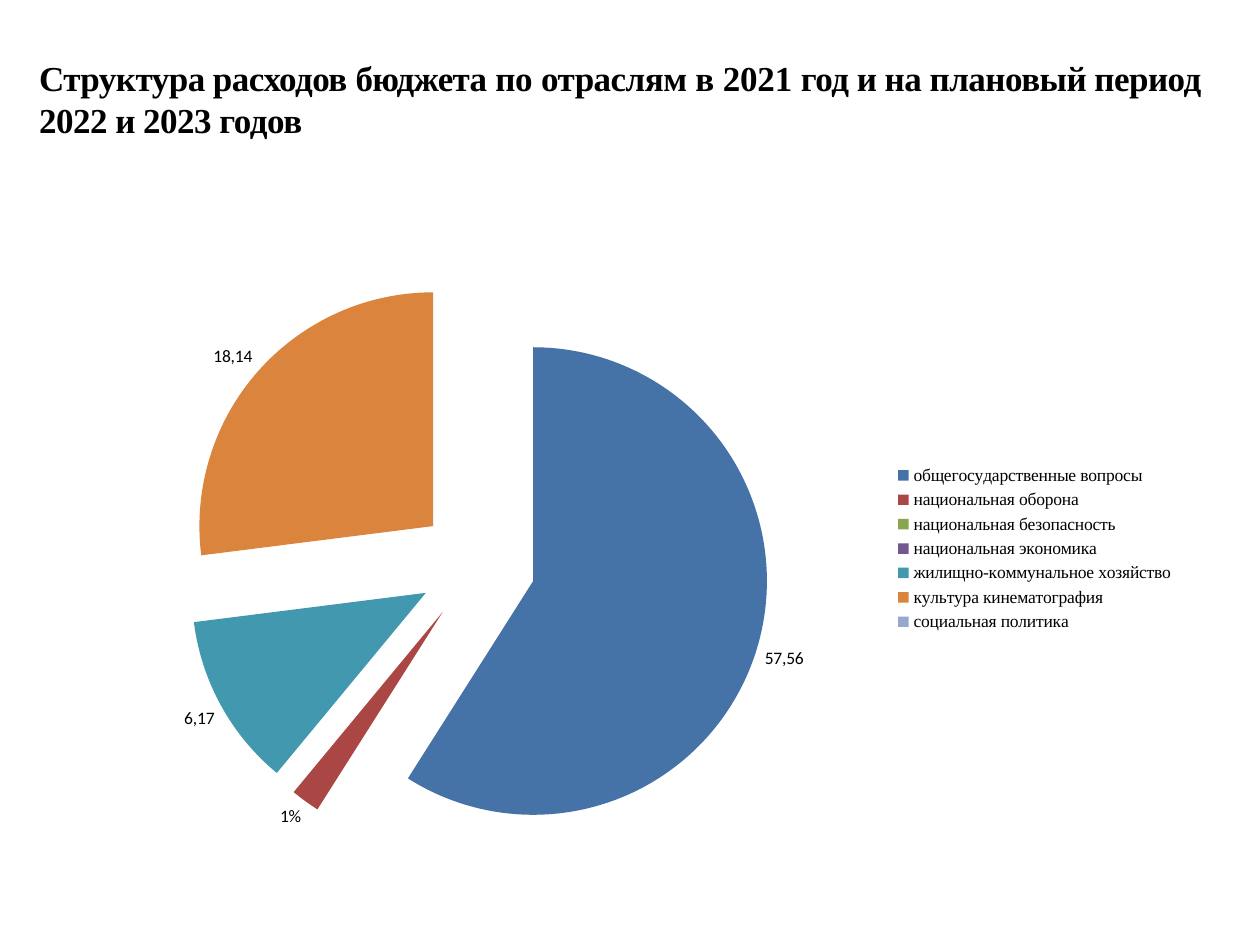
from lxml.etree import SubElement
from pptx import Presentation
from pptx.chart.data import CategoryChartData
from pptx.dml.color import RGBColor
from pptx.enum.chart import XL_CHART_TYPE, XL_LABEL_POSITION, XL_LEGEND_POSITION
from pptx.oxml import parse_xml
from pptx.oxml.ns import nsdecls, qn
from pptx.util import Inches, Pt

SERIF = "Times New Roman"
SANS = "Calibri"
TITLE = [
    ("Структура расходов ", -30), ("бюджета ", -40), ("по ", -20),
    ("отраслям ", -30), ("в ", -20), ("2021 ", -10),
    ("год и на плановый период 2022 и 2023 годов", -30),
]
SECTORS = [
    ("общегосударственные вопросы", 59, "4572A7", "57,56"),
    ("национальная оборона", 2, "AA4643", "1%"),
    ("национальная безопасность", 0, "89A54E", None),
    ("национальная экономика", 0, "71588F", None),
    ("жилищно-коммунальное хозяйство", 12, "4198AF", "6,17"),
    ("культура кинематография", 27, "DB843D", "18,14"),
    ("социальная политика", 0, "93A9CF", None),
]


def color(code):
    """Turn a hex string into a colour."""
    return RGBColor.from_string(code)


def style(font, name=SANS, size=10, bold=False):
    """Set the look of a font."""
    font.name = name
    font.size = Pt(size)
    font.bold = bold
    font.color.rgb = color("000000")


def write(para, text, spacing=None, **look):
    """Add a run of text with its format."""
    run = para.add_run()
    run.text = text
    style(run.font, **look)
    if spacing is not None:
        run.font._element.set("spc", str(spacing))


def add_title(slide):
    """Add the heading with its letter spacing."""
    box = slide.shapes.add_textbox(Inches(0.31), Inches(0.45), Inches(9.45), Inches(0.67))
    frame = box.text_frame
    frame.word_wrap = True
    frame.margin_left = frame.margin_right = 0
    frame.margin_top = frame.margin_bottom = 0
    for text, spacing in TITLE:
        write(frame.paragraphs[0], text, spacing, name=SERIF, size=20, bold=True)


def layout(**spots):
    """Make a manual chart layout from its parts."""
    node = parse_xml(f"<c:layout {nsdecls('c')}><c:manualLayout/></c:layout>")
    for tag, value in spots.items():
        SubElement(node[0], qn(f"c:{tag}")).set("val", str(value))
    return node


def place(chart):
    """Fix the places of the pie and the legend."""
    area = chart._chartSpace.chart.plotArea
    for old in area.findall(qn("c:layout")):
        area.remove(old)
    area.insert(0, layout(layoutTarget="inner", xMode="edge", yMode="edge",
                          x=0.08, y=0.07, w=0.54, h=0.9))
    legend = chart.legend._element
    for old in legend.findall(qn("c:layout")):
        legend.remove(old)
    legend.find(qn("c:legendPos")).addnext(
        layout(xMode="edge", yMode="edge", x=0.73, y=0.36, w=0.27, h=0.27))


def add_labels(plot):
    """Show percentages, with own wording on some slices."""
    plot.has_data_labels = True
    points = plot.series[0].points
    for index, (_, _, _, text) in enumerate(SECTORS):
        if text:
            label = points[index].data_label
            write(label.text_frame.paragraphs[0], text)
            label.position = XL_LABEL_POSITION.OUTSIDE_END
    moved = points[2].data_label
    style(moved.font)
    moved.position = XL_LABEL_POSITION.OUTSIDE_END
    node = plot.series[0]._element.xpath("c:dLbls/c:dLbl[c:idx/@val='2']")[0]
    node.find(qn("c:showVal")).set("val", "0")
    node.find(qn("c:showPercent")).set("val", "1")
    node.find(qn("c:idx")).addnext(layout(x=0.06, y=0))
    for labels in (plot.data_labels, plot.series[0].data_labels):
        labels.show_value = False
        labels.show_percentage = True
        labels.number_format = "0%"
        labels.number_format_is_linked = False
        labels.position = XL_LABEL_POSITION.OUTSIDE_END
        style(labels.font)


def add_pie(slide):
    """Add the exploded pie of spending by sector."""
    data = CategoryChartData()
    data.categories = [name for name, _, _, _ in SECTORS]
    data.add_series("Series 1", [value for _, value, _, _ in SECTORS])
    chart = slide.shapes.add_chart(
        XL_CHART_TYPE.PIE, Inches(0.78), Inches(1.8), Inches(8.59), Inches(5.16), data).chart
    style(chart.font)
    chart.has_title = False
    chart.has_legend = True
    chart.legend.position = XL_LEGEND_POSITION.RIGHT
    chart.legend.include_in_layout = False
    style(chart.legend.font, name=SERIF)
    plot = chart.plots[0]
    plot.vary_by_categories = True
    series = plot.series[0]
    series.format.line.fill.background()
    blast = parse_xml(f'<c:explosion {nsdecls("c")} val="25"/>')
    series._element.find(qn("c:spPr")).addnext(blast)
    for index, (_, _, code, _) in enumerate(SECTORS):
        shape = series.points[index].format
        shape.fill.solid()
        shape.fill.fore_color.rgb = color(code)
        shape.line.fill.background()
    add_labels(plot)
    place(chart)


def main():
    """Build and save the slide."""
    deck = Presentation()
    deck.slide_width = Inches(10)
    deck.slide_height = Inches(7.5)
    slide = deck.slides.add_slide(deck.slide_layouts[6])
    add_title(slide)
    add_pie(slide)
    deck.save("out.pptx")


if __name__ == "__main__":
    main()
